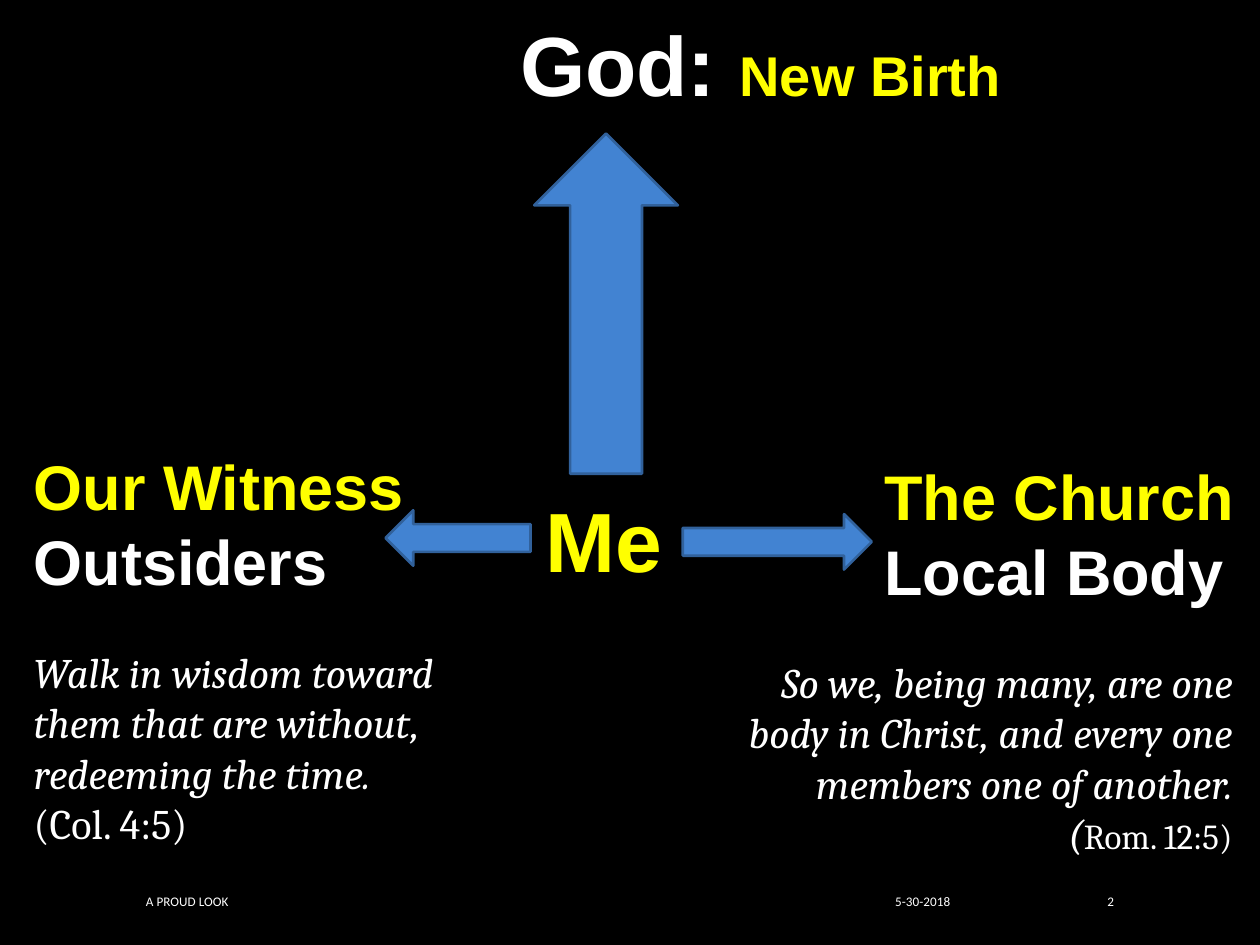
"""Build the slide that links "Me" to God, outsiders and the church."""
from pptx import Presentation
from pptx.dml.color import RGBColor
from pptx.enum.shapes import MSO_SHAPE
from pptx.enum.text import MSO_ANCHOR, MSO_AUTO_SIZE, PP_ALIGN
from pptx.util import Pt

WHITE, YELLOW, BLACK = "FFFFFF", "FFFF00", "000000"
ARROW_FILL, ARROW_LINE = "4283D2", "31619B"

HEADING = {"name": "Arial", "size": 36, "bold": True, "color": WHITE}
LARGE = {**HEADING, "size": 48}
VERSE = {"name": "Cambria", "size": 24, "italic": True, "color": WHITE}
FOOTER = {"name": "Calibri", "size": 7.5, "color": WHITE}
LEFT, RIGHT = PP_ALIGN.LEFT, PP_ALIGN.RIGHT

FOOTERS = [
    ((472.3, 504, 77.8, 21.6), RIGHT, "5-30-2018"),
    ((76.3, 504, 373.7, 21.6), LEFT, "A PROUD LOOK"),
    ((571.7, 504, 72, 21.6), RIGHT, "2"),
]

LABELS = [
    ((290.2, 3.6, 291.6, 65.5),
     [[("God: ", LARGE), ("New Birth", {**HEADING, "size": 32, "color": YELLOW})]]),
    ((304.6, 275.8, 82.1, 65.5), [[("Me", {**LARGE, "color": YELLOW})]]),
    ((12.2, 252, 228.2, 94.3),
     [[("Our Witness", {**HEADING, "color": YELLOW})], [("Outsiders", HEADING)]]),
    ((498.2, 257.8, 216.7, 94.3),
     [[("The Church", {**HEADING, "color": YELLOW})], [("Local Body", HEADING)]]),
]

VERSES = [
    ((12.2, 365.8, 290.9, 123.8), LEFT,
     [[("Walk in wisdom toward them that are without, redeeming the time.", VERSE)],
      [("(Col. 4:5)", {**VERSE, "italic": False})]]),
    ((414, 371.5, 297.4, 123.8), RIGHT,
     [[("So we, being many, are one body in Christ, and every one members one of another. (", VERSE),
       ("Rom. 12:5)", {**VERSE, "size": 20, "italic": False})]]),
]

ARROWS = [
    (MSO_SHAPE.UP_ARROW, (305.3, 76.3, 82.1, 194.4)),
    (MSO_SHAPE.LEFT_ARROW, (220.3, 291.6, 82.8, 31.7)),
    (MSO_SHAPE.RIGHT_ARROW, (390.2, 293.8, 108, 31.7)),
]


def rgb(value):
    return RGBColor.from_string(value)


def points(box):
    return [Pt(length) for length in box]


def add_text(slide, box, paragraphs, alignment=LEFT, wrap=True, anchor=MSO_ANCHOR.TOP):
    frame = slide.shapes.add_textbox(*points(box)).text_frame
    frame.auto_size = MSO_AUTO_SIZE.NONE
    frame.word_wrap = wrap
    frame.vertical_anchor = anchor
    for index, runs in enumerate(paragraphs):
        paragraph = frame.add_paragraph() if index else frame.paragraphs[0]
        paragraph.alignment = alignment
        for text, text_format in runs:
            run = paragraph.add_run()
            run.text = text
            for attribute, value in text_format.items():
                if attribute == "color":
                    run.font.color.rgb = rgb(value)
                else:
                    setattr(run.font, attribute, Pt(value) if attribute == "size" else value)


def add_arrow(slide, kind, box):
    shape = slide.shapes.add_shape(kind, *points(box))
    shape.shadow.inherit = False
    shape.fill.solid()
    shape.fill.fore_color.rgb = rgb(ARROW_FILL)
    shape.line.color.rgb = rgb(ARROW_LINE)
    shape.line.width = Pt(1.5)


def main():
    presentation = Presentation()
    presentation.slide_width, presentation.slide_height = Pt(720), Pt(540)
    slide = presentation.slides.add_slide(presentation.slide_layouts[6])
    slide.background.fill.solid()
    slide.background.fill.fore_color.rgb = rgb(BLACK)
    for box, alignment, text in FOOTERS:
        add_text(slide, box, [[(text, FOOTER)]], alignment, anchor=MSO_ANCHOR.MIDDLE)
    for kind, box in ARROWS:
        add_arrow(slide, kind, box)
    for box, paragraphs in LABELS:
        add_text(slide, box, paragraphs, wrap=False)
    for box, alignment, paragraphs in VERSES:
        add_text(slide, box, paragraphs, alignment)
    presentation.save("out.pptx")


if __name__ == "__main__":
    main()
